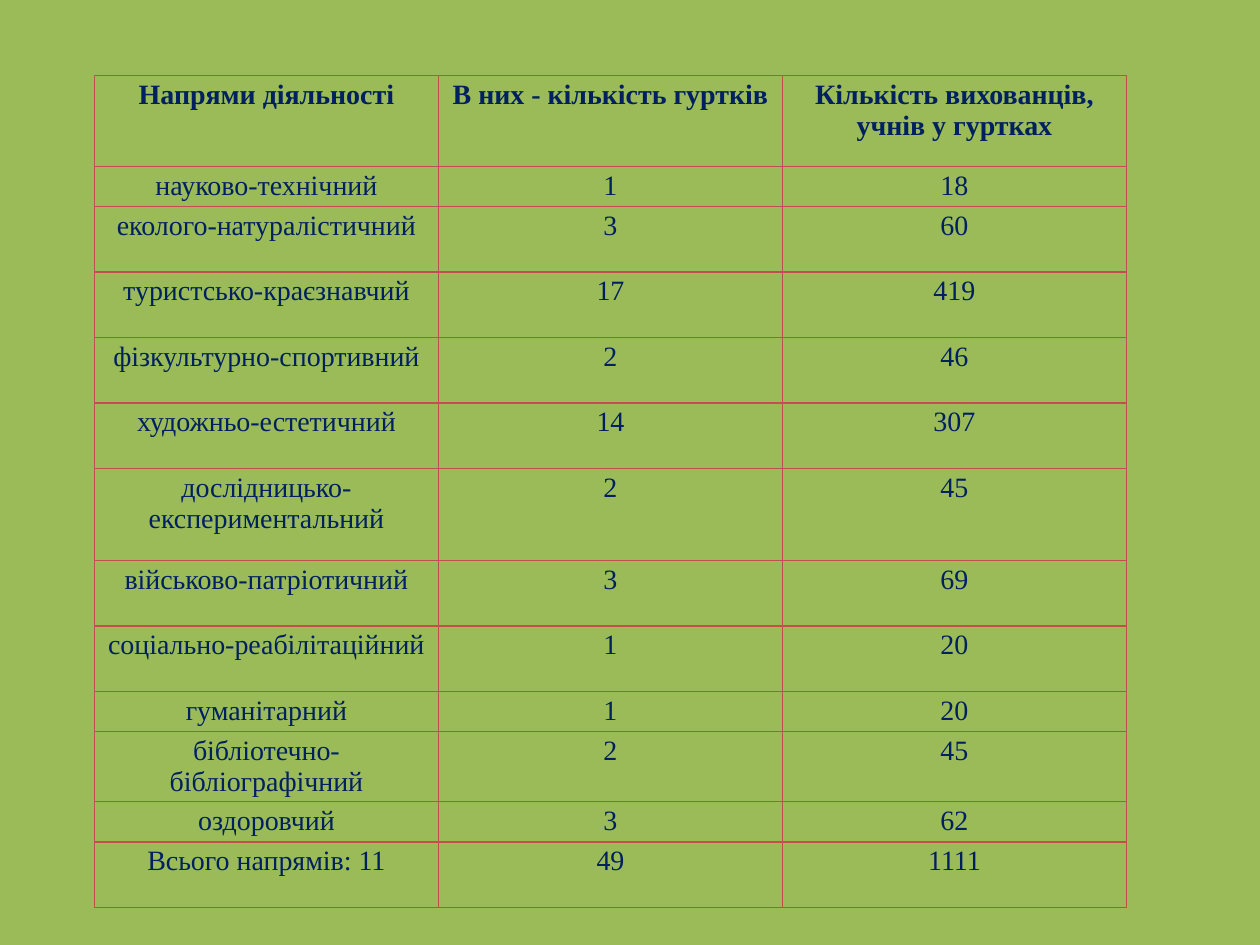
from lxml.etree import SubElement
from pptx import Presentation
from pptx.dml.color import RGBColor
from pptx.enum.text import PP_ALIGN
from pptx.oxml.ns import qn
from pptx.util import Inches, Pt

BACKGROUND = "9BBB59"
BORDER = "C0504D"
TEXT = "002060"
COLUMN_WIDTH = 2.73
# Heights in inches, each followed by the cells of its row
ACTIVITIES = [
    (0.72, "Напрями діяльності", "В них - кількість гуртків", "Кількість вихованців, учнів у гуртках"),
    (0.32, "науково-технічний", "1", "18"),
    (0.52, "еколого-натуралістичний", "3", "60"),
    (0.52, "туристсько-краєзнавчий", "17", "419"),
    (0.52, "фізкультурно-спортивний", "2", "46"),
    (0.52, "художньо-естетичний", "14", "307"),
    (0.73, "дослідницько-експериментальний", "2", "45"),
    (0.52, "військово-патріотичний", "3", "69"),
    (0.52, "соціально-реабілітаційний", "1", "20"),
    (0.32, "гуманітарний", "1", "20"),
    (0.52, "бібліотечно-бібліографічний", "2", "45"),
    (0.32, "оздоровчий", "3", "62"),
    (0.52, "Всього напрямів: 11", "49", "1111"),
]


def rgb(value):
    return RGBColor.from_string(value)


def add_borders(cell, color, width):
    properties = cell._tc.get_or_add_tcPr()
    for side in ("a:lnL", "a:lnR", "a:lnT", "a:lnB"):
        line = SubElement(properties, qn(side), w=str(Pt(width)))
        fill = SubElement(line, qn("a:solidFill"))
        SubElement(fill, qn("a:srgbClr"), val=color)


def format_cell(cell, text, bold):
    cell.text = text
    cell.margin_left = cell.margin_right = Inches(0.03)
    cell.margin_top = cell.margin_bottom = Inches(0.03)
    paragraph = cell.text_frame.paragraphs[0]
    paragraph.alignment = PP_ALIGN.CENTER
    font = paragraph.font
    font.name = "Times New Roman"
    font.size = Pt(16)
    font.bold = bold
    font.color.rgb = rgb(TEXT)
    add_borders(cell, BORDER, 1)
    cell.fill.background()


def add_activity_table(slide):
    column_count = len(ACTIVITIES[0]) - 1
    total_height = sum(height for height, *_ in ACTIVITIES)
    table = slide.shapes.add_table(
        len(ACTIVITIES), column_count, Inches(0.75), Inches(0.6),
        Inches(COLUMN_WIDTH * column_count), Inches(total_height),
    ).table
    table.horz_banding = False
    for column in table.columns:
        column.width = Inches(COLUMN_WIDTH)
    for index, (height, *texts) in enumerate(ACTIVITIES):
        row = table.rows[index]
        row.height = Inches(height)
        for cell, text in zip(row.cells, texts):
            format_cell(cell, text, bold=index == 0)


def main():
    presentation = Presentation()
    presentation.slide_width = Inches(10)
    presentation.slide_height = Inches(7.5)
    slide = presentation.slides.add_slide(presentation.slide_layouts[6])
    background = slide.background.fill
    background.solid()
    background.fore_color.rgb = rgb(BACKGROUND)
    add_activity_table(slide)
    presentation.save("out.pptx")


if __name__ == "__main__":
    main()
